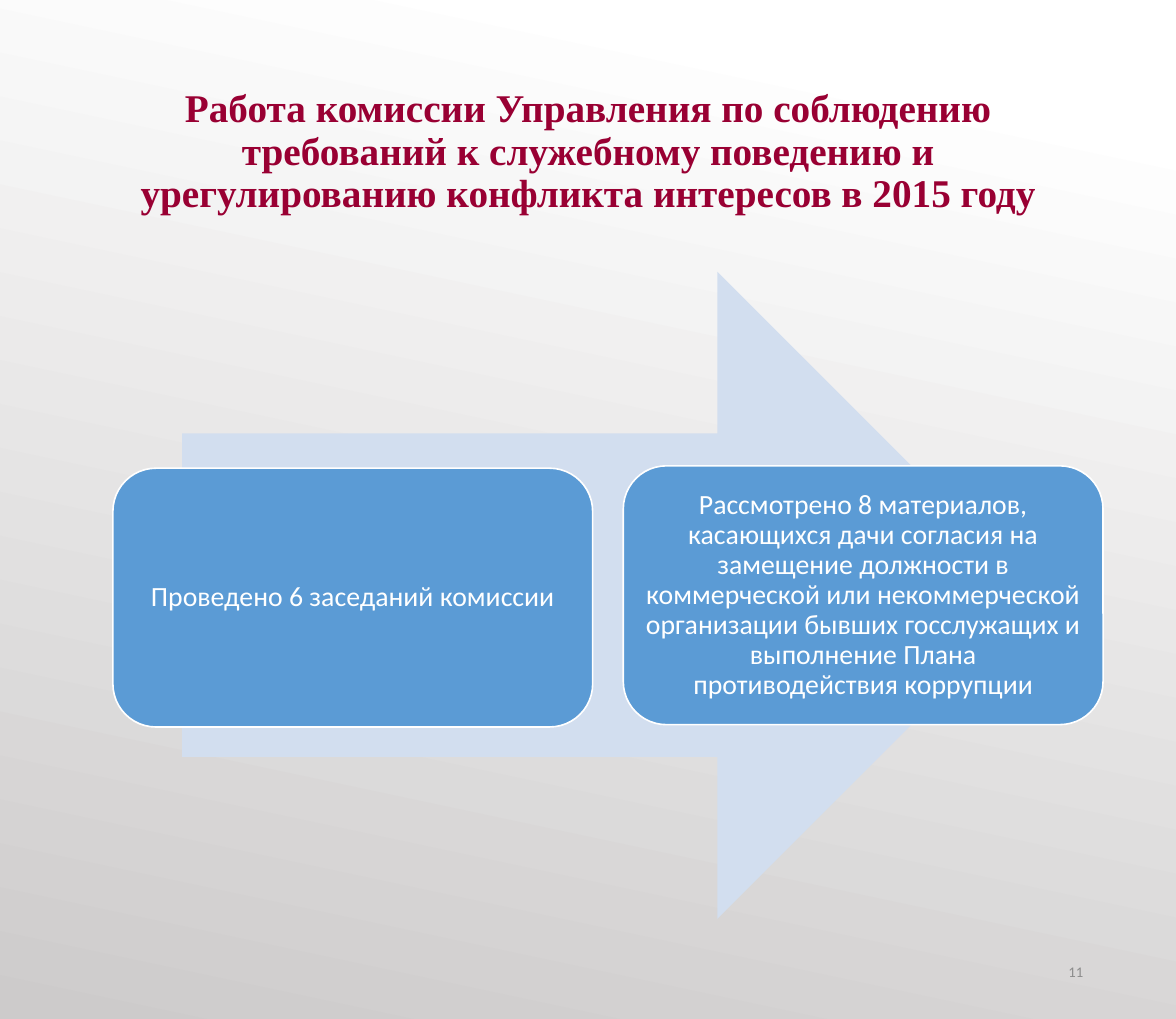
from pptx import Presentation
from pptx.dml.color import RGBColor
from pptx.enum.shapes import MSO_SHAPE as Shape
from pptx.enum.text import MSO_ANCHOR as Anchor, PP_ALIGN as Align
from pptx.util import Cm, Inches, Pt

TITLE = ("Работа комиссии Управления по соблюдению требований к служебному "
         "поведению и урегулированию конфликта интересов в 2015 году")
STEPS = [
    (0.96, 3.98, "Проведено 6 заседаний комиссии"),
    (5.3, 3.96, "Рассмотрено 8 материалов, касающихся дачи согласия на "
                "замещение должности в коммерческой или некоммерческой "
                "организации бывших госслужащих и выполнение Плана "
                "противодействия коррупции"),
]


def color(value):
    return RGBColor.from_string(value)


def paint_background(page):
    fill = page.background.fill
    fill.gradient()
    fill.gradient_angle = 360 - 102  # measured counter-clockwise
    for stop, (position, value) in zip(fill.gradient_stops,
                                       [(0.1, "FFFFFF"), (1, "CDCBCB")]):
        stop.position = position
        stop.color.rgb = color(value)


def write(box, text, size, value, font="Calibri", bold=False,
          align=Align.CENTER, spacing=0.9):
    frame = box.text_frame
    frame.word_wrap = True
    frame.vertical_anchor = Anchor.MIDDLE
    para = frame.paragraphs[0]
    para.alignment = align
    para.line_spacing = spacing
    span = para.add_run()
    span.text = text
    span.font.name = font
    span.font.size = Pt(size)
    span.font.bold = bold
    span.font.color.rgb = color(value)


def add_text(page, left, top, width, height, *args, **style):
    box = page.shapes.add_textbox(Inches(left), Inches(top),
                                  Inches(width), Inches(height))
    write(box, *args, **style)


def add_block(page, kind, left, top, width, height, fill, line=None):
    block = page.shapes.add_shape(kind, Inches(left), Inches(top),
                                  Inches(width), Inches(height))
    block.shadow.inherit = False
    block.fill.solid()
    block.fill.fore_color.rgb = color(fill)
    if line:
        block.line.color.rgb = color(line)
        block.line.width = Pt(1)
    else:
        block.line.fill.background()
    return block


def add_step(page, left, top, text):
    card = add_block(page, Shape.ROUNDED_RECTANGLE, left, top, 4.08, 2.2,
                     "5B9BD5", "FFFFFF")
    frame = card.text_frame
    frame.margin_left = frame.margin_right = Inches(0.08)
    frame.margin_top = frame.margin_bottom = Inches(0.07)
    write(card, text, 17, "FFFFFF")


def main():
    deck = Presentation()
    deck.slide_width, deck.slide_height = Inches(10), Cm(22)
    page = deck.slides.add_slide(deck.slide_layouts[6])
    paint_background(page)

    # Title
    add_text(page, 0.69, 0.46, 8.62, 1.67, TITLE, 24, "990033",
             font="Times New Roman", bold=True)

    # Process arrow with its two steps
    add_block(page, Shape.RIGHT_ARROW, 1.55, 2.31, 7.3, 5.5, "D2DEEF")
    for left, top, text in STEPS:
        add_step(page, left, top, text)

    # Page number
    add_text(page, 7.06, 8.03, 2.25, 0.46, "11", 9, "8C8C8C",
             align=Align.RIGHT, spacing=1.0)

    deck.save("out.pptx")


if __name__ == "__main__":
    main()
